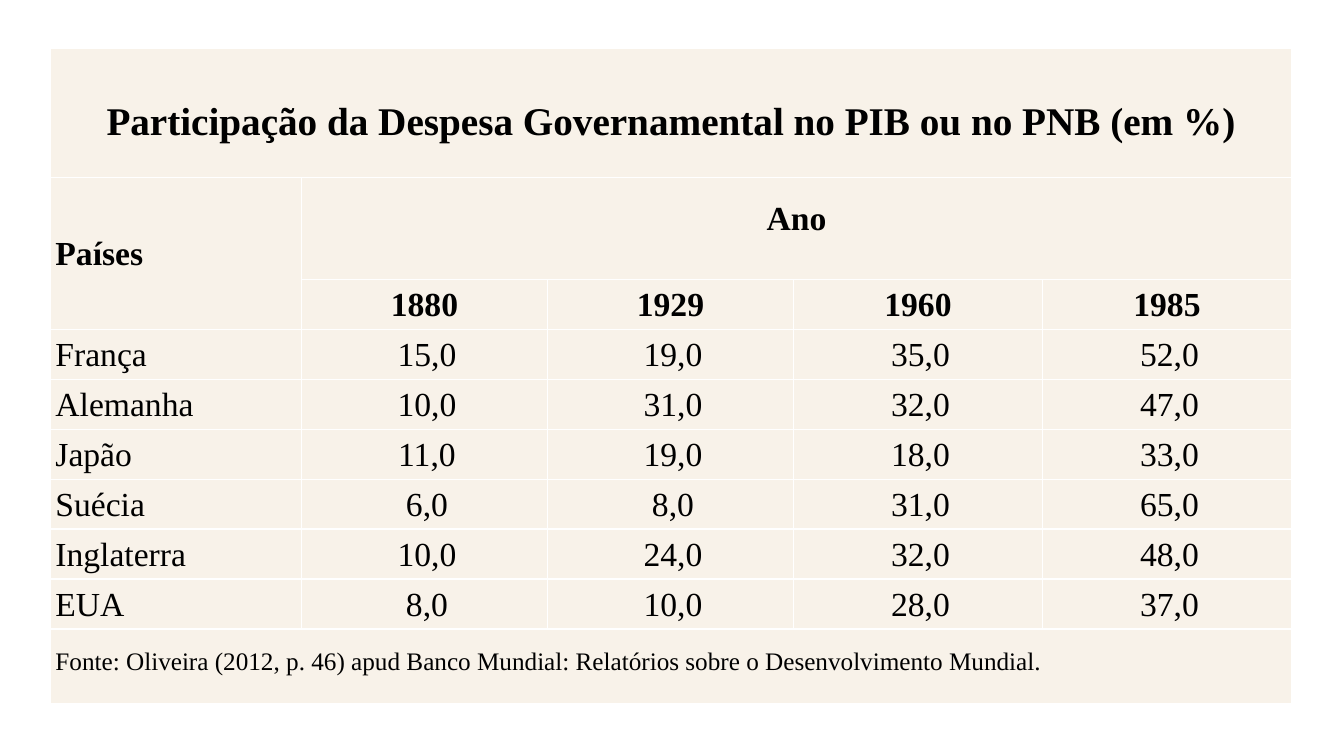
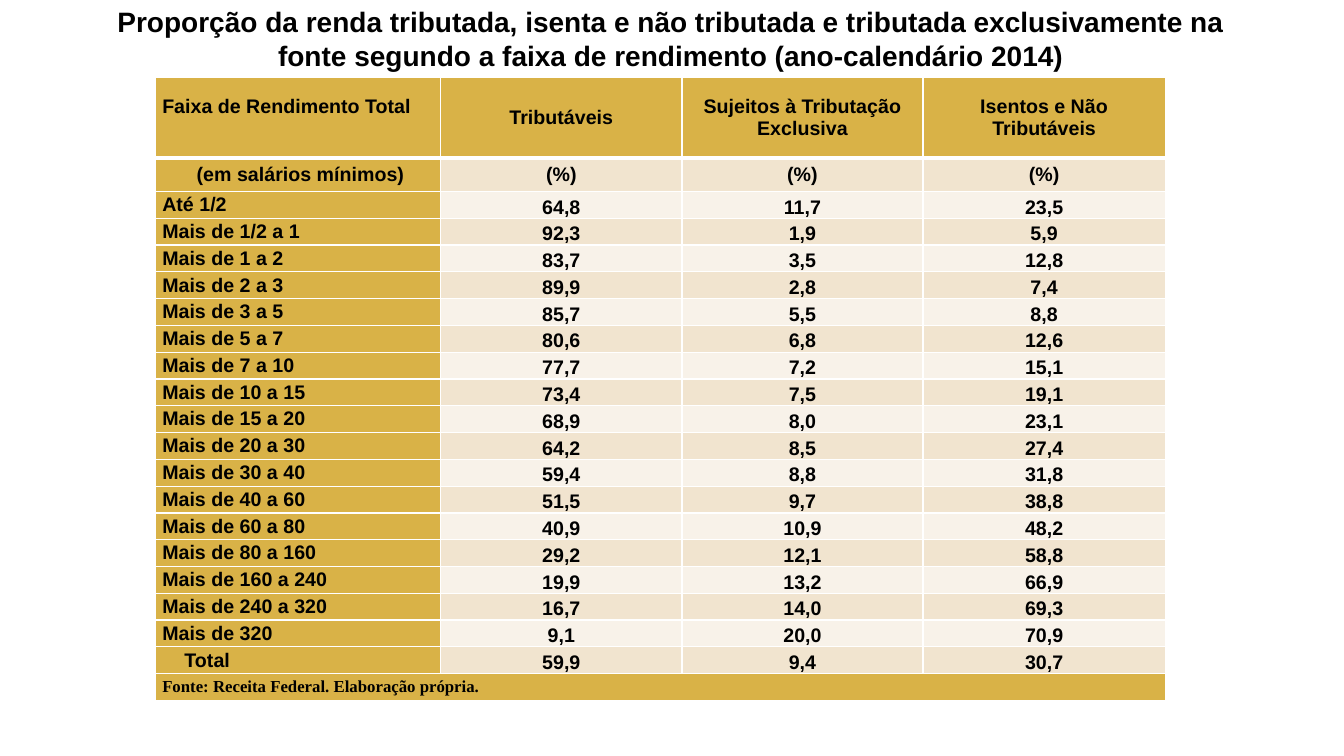
"""Build two slides of Portuguese tables on public spending and taxed income."""
from dataclasses import dataclass

from lxml import etree
from pptx import Presentation
from pptx import util as u
from pptx.dml.color import RGBColor
from pptx.enum import text
from pptx.oxml.ns import qn

LEFT, CENTER = text.PP_ALIGN.LEFT, text.PP_ALIGN.CENTER
MIDDLE, BOTTOM = text.MSO_ANCHOR.MIDDLE, text.MSO_ANCHOR.BOTTOM


@dataclass(frozen=True)
class Theme:
    ink: str = "000000"
    rule: str = "FFFFFF"
    gold: str = "D9B247"
    sand: str = "F1E4CF"
    cream: str = "F8F2E9"
    serif: str = "Times New Roman"
    sans: str = "Arial"
    banner: int = 28
    body: int = 24
    heading: int = 20
    source: int = 18
    dense: int = 14
    note: int = 12
    thin: int = 1
    thick: int = 3


class Deck:
    def __init__(self, theme):
        self.t = theme
        self.prs = Presentation()
        self.prs.slide_width, self.prs.slide_height = u.Inches(13.33), u.Inches(7.5)
        self.s = None

    def slide(self):
        self.s = self.prs.slides.add_slide(self.prs.slide_layouts[6])

    def box(self, left, top, width, height):
        w, h = self.prs.slide_width / 100, self.prs.slide_height / 100
        return [round(v) for v in (left * w, top * h, width * w, height * h)]

    def set_text(self, tf, words, size, font, bold=False, align=CENTER, spacing=None):
        tf.word_wrap = True
        tf.text = words
        p = tf.paragraphs[0]
        p.alignment, p.line_spacing = align, spacing
        for r in p.runs:
            r.font.size, r.font.name, r.font.bold = u.Pt(size), font, bold
            r.font.color.rgb = RGBColor.from_string(self.t.ink)

    def title(self, words, box):
        sp = self.s.shapes.add_textbox(*self.box(*box))
        self.set_text(sp.text_frame, words, self.t.heading, self.t.sans, True)

    def borders(self, cell, widths):
        tc_pr = cell._tc.get_or_add_tcPr()
        for side, width in zip("LRTB", widths):
            ln = etree.SubElement(tc_pr, qn(f"a:ln{side}"), w=str(u.Pt(width)))
            fill = etree.SubElement(ln, qn("a:solidFill"))
            etree.SubElement(fill, qn("a:srgbClr"), val=self.t.rule)

    def cell(self, cell, words, fill, widths, pad, anchor=MIDDLE, **style):
        self.borders(cell, widths)
        cell.fill.solid()
        cell.fill.fore_color.rgb = RGBColor.from_string(fill)
        cell.margin_left, cell.margin_top, cell.margin_right, cell.margin_bottom = map(u.Inches, pad)
        cell.vertical_anchor = anchor
        if words:
            self.set_text(cell.text_frame, words, **style)

    def table(self, box, cols, rows, data, look, spans=(), heavy=None):
        left, top, width, height = self.box(*box)
        tbl = self.s.shapes.add_table(len(rows), len(cols), left, top, width, height).table
        tbl.first_row = tbl.horz_banding = False
        for col, share in zip(tbl.columns, cols):
            col.width = round(width * share / sum(cols))
        for row, share in zip(tbl.rows, rows):
            row.height = round(height * share / sum(rows))
        for (r1, c1), (r2, c2) in spans:
            tbl.cell(r1, c1).merge(tbl.cell(r2, c2))
        t = self.t
        for r, line in enumerate(data):
            above = t.thick if heavy is not None and r == heavy + 1 else t.thin
            below = t.thick if r == heavy else t.thin
            for c in range(len(cols)):
                words = line[c] if c < len(line) else ""
                self.cell(tbl.cell(r, c), words, widths=(t.thin, t.thin, above, below), **look(r, c))


SPENDING = [
    ["Participação da Despesa Governamental no PIB ou no PNB (em %)"],
    ["Países", "Ano"],
    ["", "1880", "1929", "1960", "1985"],
    ["França", "15,0", "19,0", "35,0", "52,0"],
    ["Alemanha", "10,0", "31,0", "32,0", "47,0"],
    ["Japão", "11,0", "19,0", "18,0", "33,0"],
    ["Suécia", "6,0", "8,0", "31,0", "65,0"],
    ["Inglaterra", "10,0", "24,0", "32,0", "48,0"],
    ["EUA", "8,0", "10,0", "28,0", "37,0"],
    ["Fonte: Oliveira (2012, p. 46) apud Banco Mundial: Relatórios sobre o Desenvolvimento Mundial."],
]

INCOME = [
    ["Faixa de Rendimento Total", "Tributáveis", "Sujeitos à Tributação Exclusiva", "Isentos e Não Tributáveis"],
    ["(em salários mínimos)", "(%)", "(%)", "(%)"],
    ["Até 1/2", "64,8", "11,7", "23,5"],
    ["Mais de 1/2 a 1", "92,3", "1,9", "5,9"],
    ["Mais de 1 a 2", "83,7", "3,5", "12,8"],
    ["Mais de 2 a 3", "89,9", "2,8", "7,4"],
    ["Mais de 3 a 5", "85,7", "5,5", "8,8"],
    ["Mais de 5 a 7", "80,6", "6,8", "12,6"],
    ["Mais de 7 a 10", "77,7", "7,2", "15,1"],
    ["Mais de 10 a 15", "73,4", "7,5", "19,1"],
    ["Mais de 15 a 20", "68,9", "8,0", "23,1"],
    ["Mais de 20 a 30", "64,2", "8,5", "27,4"],
    ["Mais de 30 a 40", "59,4", "8,8", "31,8"],
    ["Mais de 40 a 60", "51,5", "9,7", "38,8"],
    ["Mais de 60 a 80", "40,9", "10,9", "48,2"],
    ["Mais de 80 a 160", "29,2", "12,1", "58,8"],
    ["Mais de 160 a 240", "19,9", "13,2", "66,9"],
    ["Mais de 240 a 320", "16,7", "14,0", "69,3"],
    ["Mais de 320", "9,1", "20,0", "70,9"],
    ["Total", "59,9", "9,4", "30,7"],
    ["Fonte: Receita Federal. Elaboração própria."],
]


def spending_slide(deck):
    t = deck.t
    last = len(SPENDING) - 1

    def look(r, c):
        style = dict(fill=t.cream, font=t.serif, size=t.body, bold=r < 3, spacing=1.07,
                     align=CENTER if c or r == 0 else LEFT,
                     pad=(0.05, 0, 0 if c and r > 2 else 0.05, 0))
        if r == 0:
            style.update(size=t.banner, pad=(0.05, 0.15, 0.05, 0))
        elif r == 1 and c:
            style.update(anchor=BOTTOM, pad=(0.05, 0, 0.05, 0.41))
        elif r == last:
            style.update(size=t.source, pad=(0.05, 0, 0.05, 0.1))
        return style

    deck.slide()
    deck.table((3.75, 6.4, 92.35, 86.67), [2.49, 2.44, 2.44, 2.47, 2.47],
               [2.58, 2.04] + [1] * 7 + [1.49], SPENDING, look,
               spans=[((0, 0), (0, 4)), ((1, 0), (2, 0)), ((1, 1), (1, 4)), ((last, 0), (last, 4))])


def income_slide(deck):
    t = deck.t
    last = len(INCOME) - 1
    pads = {0: (0.07, 0, 0.07, 0.22), 1: (0.12, 0, 0.07, 0), last - 1: (0.29, 0, 0.07, 0)}

    def look(r, c):
        side = c == 0
        band = t.sand if r % 2 else t.cream
        style = dict(fill=t.gold if side or r in (0, last) else band,
                     font=t.sans, size=t.dense, bold=True,
                     align=LEFT if side and r != 1 else CENTER,
                     anchor=MIDDLE if side or r < 2 else BOTTOM,
                     pad=pads.get(r if side else None, (0.07, 0, 0.07, 0)))
        if r == last:
            style.update(font=t.serif, size=t.note)
        return style

    deck.slide()
    deck.table((11.55, 10.3, 75.15, 82.4), [2.83, 2.39, 2.39, 2.4],
               [3, 1.24] + [1] * 19, INCOME, look, spans=[((last, 0), (last, 3))], heavy=0)
    deck.title("Proporção da renda tributada, isenta e não tributada e tributada exclusivamente na "
               "fonte segundo a faixa de rendimento (ano-calendário 2014)", (6.15, 0, 87.55, 10.27))


def main():
    deck = Deck(Theme())
    spending_slide(deck)
    income_slide(deck)
    deck.prs.save("out.pptx")


if __name__ == "__main__":
    main()
